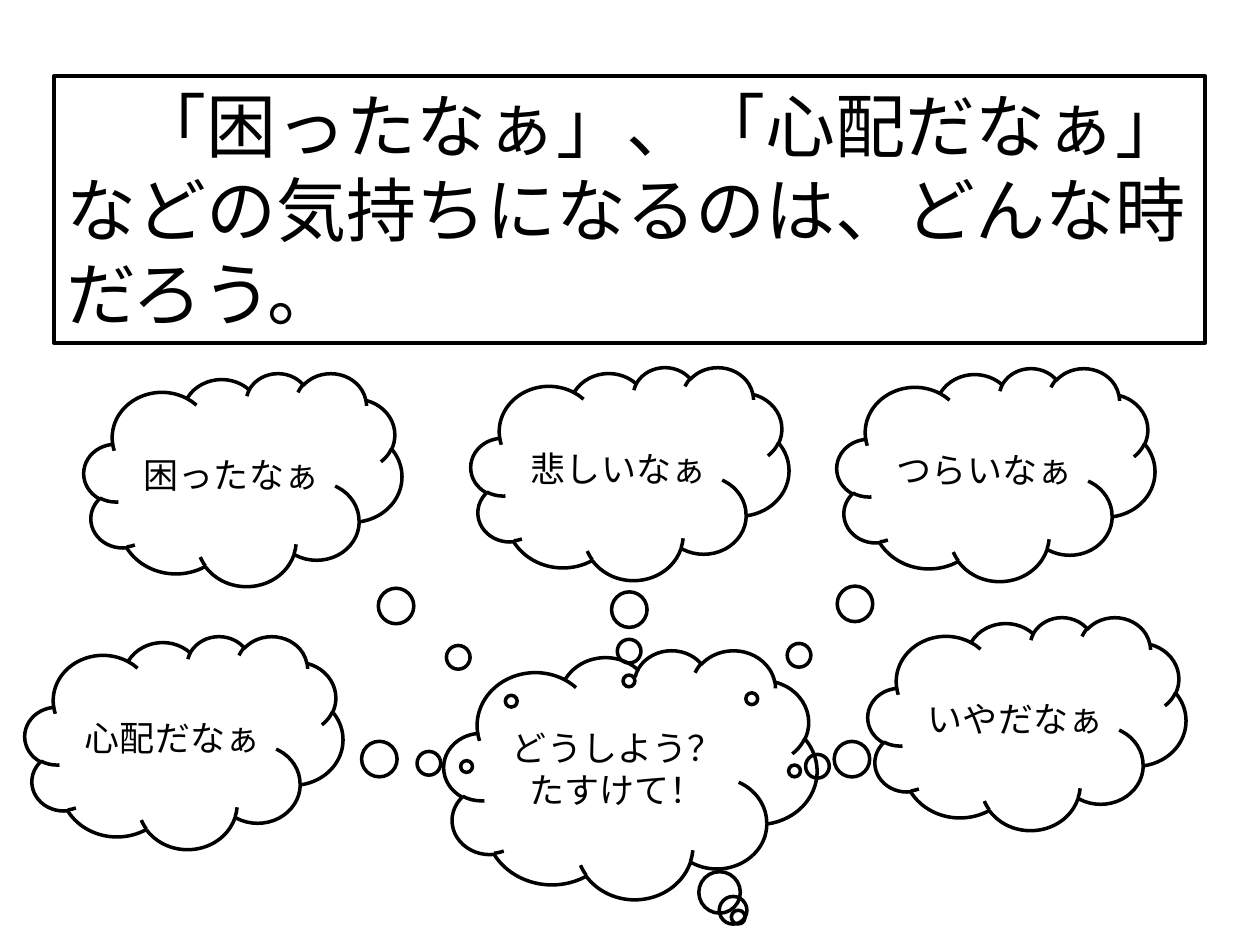
from dataclasses import dataclass
from pptx import Presentation
from pptx import util as u
from pptx.dml.color import RGBColor
from pptx.enum import shapes, text
from pptx.oxml.ns import qn
from lxml import etree

SCALE = 914400 / 126


@dataclass(frozen=True)
class Theme:
    font: str = "Noto Sans CJK JP"
    ink: RGBColor = RGBColor(0, 0, 0)
    head: int = 40
    body: int = 20
    frame: float = 2.25
    edge: float = 2


THEME = Theme()
SMALL = (318, 213)
LARGE = (373, 249)
CLOUDS = [
    (84, 373, SMALL, (0.844, 1.041), ["困ったなぁ"]),
    (25, 636, SMALL, (0.889, 0.113), ["心配だなぁ"]),
    (471, 367, SMALL, (-0.003, 0.974), ["悲しいなぁ"]),
    (837, 368, SMALL, (-0.768, 1.053), ["つらいなぁ"]),
    (868, 617, SMALL, (-0.731, 0.223), ["いやだなぁ"]),
    (444, 650, LARGE, (0.289, 0.573), ["どうしよう？", "たすけて！"]),
]


def px(n):
    return u.Emu(round(n * SCALE))


def outline(shape, width):
    shape.fill.background()
    shape.line.color.rgb = THEME.ink
    shape.line.width = u.Pt(width)


def add_run(para, words, size):
    run = para.add_run()
    run.text = words
    run.font.name = THEME.font
    run.font.size = u.Pt(size)
    run.font.color.rgb = THEME.ink
    east = etree.SubElement(run.font._element, qn("a:ea"))
    east.set("typeface", THEME.font)


def write(shape, lines, size, align, anchor):
    frame = shape.text_frame
    frame.word_wrap = True
    frame.vertical_anchor = anchor
    for i, words in enumerate(lines):
        para = frame.add_paragraph() if i else frame.paragraphs[0]
        para.alignment = align
        add_run(para, words, size)


def add_title(slide, words):
    title = slide.shapes.title
    title.left, title.top = px(54), px(76)
    title.width, title.height = px(1151), px(267)
    outline(title, THEME.frame)
    write(title, [words], THEME.head, text.PP_ALIGN.LEFT, text.MSO_ANCHOR.TOP)
    title.text_frame.auto_size = text.MSO_AUTO_SIZE.SHAPE_TO_FIT_TEXT


def add_cloud(slide, left, top, size, tail, lines):
    cloud = slide.shapes.add_shape(
        shapes.MSO_SHAPE.CLOUD_CALLOUT, px(left), px(top), *map(px, size))
    cloud.shadow.inherit = False
    for i, value in enumerate(tail):
        cloud.adjustments[i] = value
    outline(cloud, THEME.edge)
    write(cloud, lines, THEME.body, text.PP_ALIGN.CENTER, text.MSO_ANCHOR.MIDDLE)


def main():
    deck = Presentation()
    deck.slide_width, deck.slide_height = px(1260), px(945)
    slide = deck.slides.add_slide(deck.slide_layouts.get_by_name("Title Only"))
    add_title(slide, "　「困ったなぁ」、「心配だなぁ」などの気持ちになるのは、どんな時だろう。")
    for cloud in CLOUDS:
        add_cloud(slide, *cloud)
    deck.save("out.pptx")


if __name__ == "__main__":
    main()
